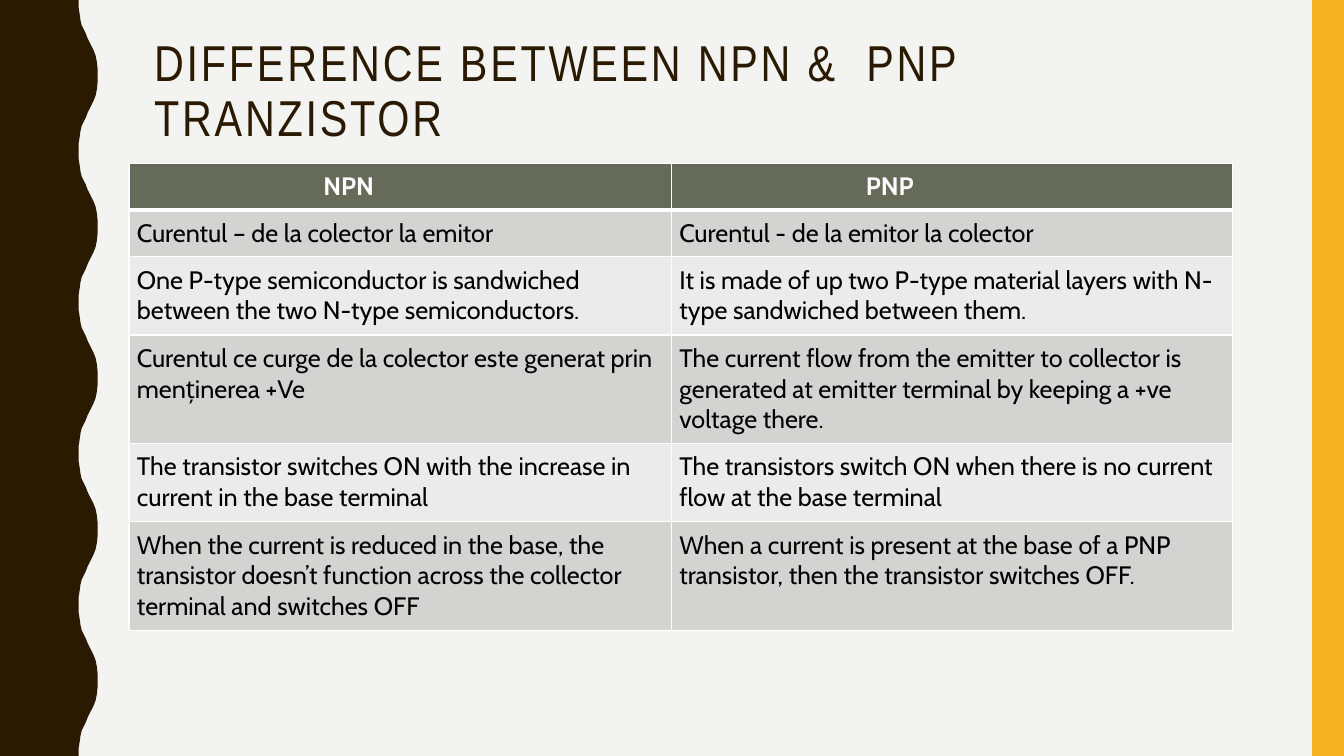
from typing import NamedTuple

from lxml.etree import SubElement
from pptx import Presentation
from pptx.dml.color import RGBColor
from pptx.enum.shapes import MSO_SHAPE
from pptx.enum.text import MSO_ANCHOR, MSO_AUTO_SIZE, PP_ALIGN
from pptx.oxml import parse_xml
from pptx.oxml.ns import nsdecls, qn
from pptx.shapes.base import BaseShape
from pptx.slide import Slide
from pptx.table import _Cell as Cell
from pptx.util import Cm, Pt

DARK, GOLD, PAPER = "2A1A00", "F8B323", "F3F3F2"
HEADER, BANDS = "656A59", ("D3D4D1", "EAEBEA")
WHITE, BLACK = "FFFFFF", "000000"
PAGE_WIDTH, PAGE_HEIGHT = 33.87, 19.05
WAVE_COUNT = 5
WAVE_LENGTH = PAGE_HEIGHT / WAVE_COUNT
# (x, y) from a trough of the wave to the next crest, in centimetres
HALF_WAVE = [
    (1.98, 0), (1.98, 0.18), (2.01, 0.36), (2.03, 0.51), (2.06, 0.64),
    (2.11, 0.74), (2.16, 0.84), (2.21, 0.97), (2.26, 1.07), (2.31, 1.17),
    (2.36, 1.27), (2.41, 1.4), (2.44, 1.55), (2.46, 1.73), (2.46, WAVE_LENGTH / 2),
]
COLUMN_WIDTHS = (13.67, 14.15)
HEADER_INDENT = 4.7


class Row(NamedTuple):
    height: float
    npn: str
    pnp: str


ROWS = [
    Row(1.18, "NPN", "PNP"),
    Row(1.18, "Curentul – de la colector la emitor", "Curentul - de la emitor la colector"),
    Row(1.97, "One P-type semiconductor is sandwiched between the two N-type semiconductors.",
        "It is made of up two P-type material layers with N-type sandwiched between them."),
    Row(2.74, "Curentul ce curge de la colector este generat prin menținerea +Ve",
        "The current flow from the emitter to collector is generated at emitter terminal "
        "by keeping a +ve voltage there."),
    Row(1.97, "The transistor switches ON with the increase in current in the base terminal",
        "The transistors switch ON when there is no current flow at the base terminal"),
    Row(2.74, "When the current is reduced in the base, the transistor doesn’t function across "
        "the collector terminal and switches OFF",
        "When a current is present at the base of a PNP transistor, then the transistor "
        "switches OFF."),
]


def colour(value: str) -> RGBColor:
    return RGBColor.from_string(value)


def paint(shape: BaseShape, value: str) -> None:
    shape.fill.solid()
    shape.fill.fore_color.rgb = colour(value)
    shape.line.fill.background()
    shape.shadow.inherit = False


def add_side_bands(page: Slide) -> None:
    wave = HALF_WAVE + [(x, WAVE_LENGTH - y) for x, y in HALF_WAVE[-2::-1]]
    edge = [(Cm(x), Cm(y + number * WAVE_LENGTH))
            for number in range(WAVE_COUNT) for x, y in wave]
    builder = page.shapes.build_freeform(0, 0)
    builder.add_line_segments(edge + [(0, Cm(PAGE_HEIGHT))], close=True)
    paint(builder.convert_to_shape(), DARK)
    gold_width = 0.8
    gold_band = page.shapes.add_shape(
        MSO_SHAPE.RECTANGLE, Cm(PAGE_WIDTH - gold_width), 0, Cm(gold_width), Cm(PAGE_HEIGHT))
    paint(gold_band, GOLD)


def add_title(page: Slide, text: str) -> None:
    title = page.shapes.title
    title.left, title.top, title.width, title.height = Cm(3.63), Cm(0.84), Cm(28.27), Cm(1.65)
    frame = title.text_frame
    frame.text = text
    frame.word_wrap = True
    frame.auto_size = MSO_AUTO_SIZE.NONE
    frame.vertical_anchor = MSO_ANCHOR.TOP
    para = frame.paragraphs[0]
    para.alignment = PP_ALIGN.LEFT
    para.line_spacing = 0.9
    para.font.name = "Arial Narrow"
    para.font.size = Pt(36)
    para.font.color.rgb = colour(DARK)
    para.runs[0].font._element.set("spc", "200")


def set_borders(cell: Cell, top: float, bottom: float) -> None:
    """Draw white borders; top and bottom are line widths in points."""
    properties = cell._tc.get_or_add_tcPr()
    widths = {"lnL": 1, "lnR": 1, "lnT": top, "lnB": bottom}
    for position, (side, width) in enumerate(widths.items()):
        line = parse_xml(f'<a:{side} {nsdecls("a")} w="{Pt(width)}"/>')
        fill = SubElement(line, qn("a:solidFill"))
        SubElement(fill, qn("a:srgbClr"), val=WHITE)
        properties.insert(position, line)


def fill_cell(cell: Cell, text: str, row_number: int) -> None:
    is_header = row_number == 0
    cell.text = text
    cell.margin_left = cell.margin_right = cell.margin_top = cell.margin_bottom = Cm(0.2)
    cell.fill.solid()
    cell.fill.fore_color.rgb = colour(HEADER if is_header else BANDS[(row_number - 1) % 2])
    set_borders(cell, top=3 if row_number == 1 else 1, bottom=3 if is_header else 1)
    para = cell.text_frame.paragraphs[0]
    if is_header:
        para._p.get_or_add_pPr().set("marL", str(Cm(HEADER_INDENT)))
    para.font.name = "Cabin"
    para.font.size = Pt(18)
    para.font.bold = is_header
    para.font.color.rgb = colour(WHITE if is_header else BLACK)


def add_comparison(page: Slide) -> None:
    table = page.shapes.add_table(
        len(ROWS), len(COLUMN_WIDTHS), Cm(3.25), Cm(4.11),
        Cm(sum(COLUMN_WIDTHS)), Cm(sum(row.height for row in ROWS))).table
    for column, width in zip(table.columns, COLUMN_WIDTHS):
        column.width = Cm(width)
    for number, row in enumerate(ROWS):
        table.rows[number].height = Cm(row.height)
        for column_number, text in enumerate((row.npn, row.pnp)):
            fill_cell(table.cell(number, column_number), text, number)


def main() -> None:
    deck = Presentation()
    deck.slide_width, deck.slide_height = Cm(PAGE_WIDTH), Cm(PAGE_HEIGHT)
    page = deck.slides.add_slide(deck.slide_layouts.get_by_name("Title Only"))
    page.background.fill.solid()
    page.background.fill.fore_color.rgb = colour(PAPER)
    add_side_bands(page)
    add_title(page, "DIFFERENCE BETWEEN NPN &  PNP TRANZISTOR")
    add_comparison(page)
    deck.save("out.pptx")


if __name__ == "__main__":
    main()
